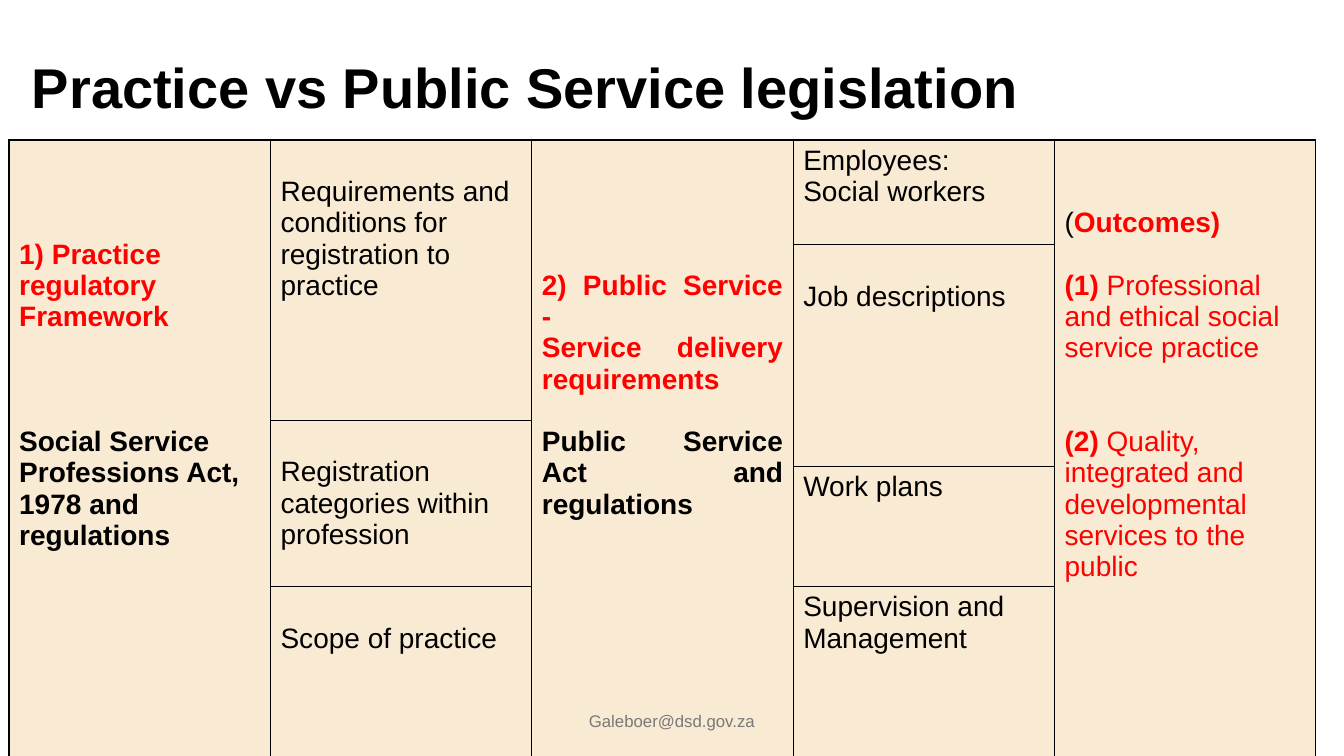
from lxml import etree
from pptx import Presentation
from pptx.dml.color import RGBColor
from pptx.enum import text as t
from pptx.oxml.ns import qn
from pptx.util import Pt

COLORS = {"black": "000000", "red": "FF0000", "cream": "F9EAD3", "grey": "797979"}
FONT = "Arial"
TITLE = "Practice vs Public Service legislation"
CONTACT = "Galeboer@dsd.gov.za"
LINE, MARGIN = 22.34, 3.6
COLUMN_WIDTH = 186.7
ROW_HEIGHTS = [74.6, 118.6, 33, 85.7, 130]

# row, column, rows spanned, alignment, paragraphs of (lines skipped, runs of (text, colour, bold))
CELLS = [
    (0, 0, 5, "LEFT", [
        (3, [("1) Practice regulatory Framework", "red", True)]),
        (3, [("Social Service Professions Act, 1978 and regulations", "black", True)])]),
    (0, 1, 2, "LEFT", [
        (1, [("Requirements and conditions for registration to practice", "black", False)])]),
    (2, 1, 2, "LEFT", [
        (1, [("Registration categories within profession", "black", False)])]),
    (4, 1, 1, "LEFT", [(1, [("Scope of practice", "black", False)])]),
    (0, 2, 5, "JUSTIFY", [
        (4, [("2) Public Service - ", "red", True)]),
        (0, [("Service delivery requirements", "red", True)]),
        (1, [("Public Service Act and regulations", "black", True)])]),
    (0, 3, 1, "LEFT", [
        (0, [("Employees:", "black", False)]),
        (0, [("Social workers", "black", False)])]),
    (1, 3, 2, "LEFT", [(1, [("Job descriptions", "black", False)])]),
    (3, 3, 1, "LEFT", [(0, [("Work plans", "black", False)])]),
    (4, 3, 1, "LEFT", [(0, [("Supervision and Management", "black", False)])]),
    (0, 4, 5, "LEFT", [
        (2, [("(", "black", False), ("Outcomes)", "red", True)]),
        (1, [("(1) ", "red", True),
             ("Professional and ethical social service practice", "red", False)]),
        (2, [("(2) ", "red", True),
             ("Quality, integrated and developmental services to the public", "red", False)])]),
]


def color(name):
    return RGBColor.from_string(COLORS[name])


def style(font, size, name, bold):
    font.name, font.size, font.bold = FONT, Pt(size), bold
    font.color.rgb = color(name)


def add_line(slide, words, box, size, name, bold, align):
    frame = slide.shapes.add_textbox(*map(Pt, box)).text_frame
    frame.word_wrap = True
    frame.vertical_anchor = t.MSO_ANCHOR.MIDDLE
    line = frame.paragraphs[0]
    line.text, line.alignment = words, align
    style(line.font, size, name, bold)
    return line


def paint(cell):
    props = cell._tc.get_or_add_tcPr()
    for side in ("a:lnL", "a:lnR", "a:lnT", "a:lnB"):
        border = etree.SubElement(props, qn(side), w=str(Pt(1)))
        solid = etree.SubElement(border, qn("a:solidFill"))
        etree.SubElement(solid, qn("a:srgbClr"), val=COLORS["black"])
    cell.fill.solid()
    cell.fill.fore_color.rgb = color("cream")


def write(cell, align, paragraphs):
    cell.margin_top = Pt(round(MARGIN + paragraphs[0][0] * LINE, 2))
    frame = cell.text_frame
    for index, (skipped, runs) in enumerate(paragraphs):
        line = frame.add_paragraph() if index else frame.paragraphs[0]
        line.alignment = t.PP_ALIGN[align]
        if index and skipped:
            line.space_before = Pt(round(skipped * LINE, 2))
        for words, name, bold in runs:
            run = line.add_run()
            run.text = words
            style(run.font, 20, name, bold)


def main():
    deck = Presentation()
    deck.slide_width, deck.slide_height = Pt(960), Pt(540)
    slide = deck.slides.add_slide(deck.slide_layouts[6])

    title = add_line(slide, TITLE, (15.8, 29.5, 919.4, 70.6), 40, "black", True, t.PP_ALIGN.LEFT)
    title.line_spacing = 0.9

    legislation = slide.shapes.add_table(
        len(ROW_HEIGHTS), 5, Pt(6.5), Pt(100), Pt(5 * COLUMN_WIDTH), Pt(sum(ROW_HEIGHTS))).table
    legislation.first_row = legislation.horz_banding = False
    for column in legislation.columns:
        column.width = Pt(COLUMN_WIDTH)
    for row, height in zip(legislation.rows, ROW_HEIGHTS):
        row.height = Pt(height)
    for cell in legislation.iter_cells():
        paint(cell)
    for row, column, span, align, paragraphs in CELLS:
        cell = legislation.cell(row, column)
        if span > 1:
            cell.merge(legislation.cell(row + span - 1, column))
        write(cell, align, paragraphs)

    add_line(slide, CONTACT, (318, 500.5, 324, 28.8), 12, "grey", False, t.PP_ALIGN.CENTER)
    deck.save("out.pptx")


if __name__ == "__main__":
    main()
